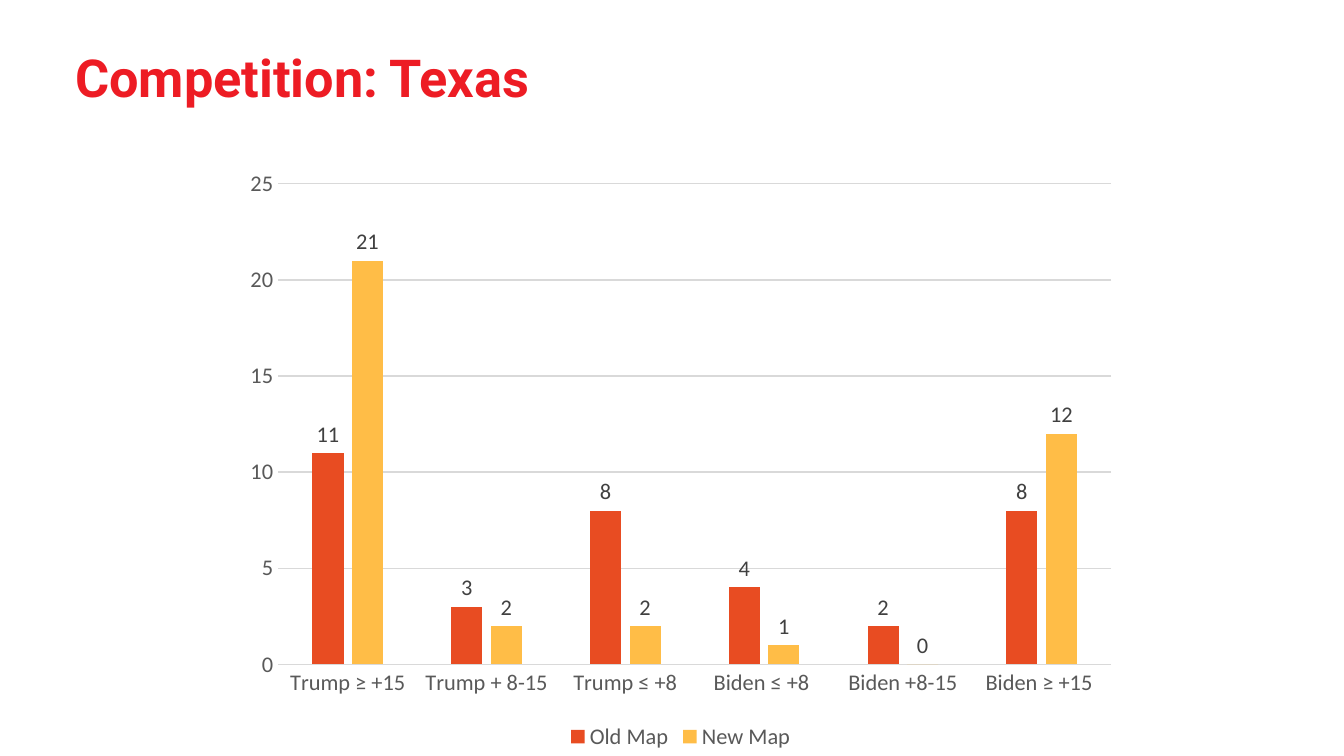
from pptx import Presentation
from pptx.chart.data import CategoryChartData
from pptx.dml.color import RGBColor
from pptx.enum import chart as ch, text
from pptx.util import Inches, Pt

RED = RGBColor(0xED, 0x1C, 0x24)
ORANGE = RGBColor(0xE8, 0x4C, 0x22)
YELLOW = RGBColor(0xFF, 0xBD, 0x47)
DARK_GRAY = RGBColor(0x40, 0x40, 0x40)
GRAY = RGBColor(0x59, 0x59, 0x59)
LIGHT_GRAY = RGBColor(0xD9, 0xD9, 0xD9)

CATEGORIES = ["Trump ≥ +15", "Trump + 8-15", "Trump ≤ +8",
              "Biden ≤ +8 ", "Biden +8-15", "Biden ≥ +15 "]
SERIES = [("Old Map", [11, 3, 8, 4, 2, 8], ORANGE),
          ("New Map", [21, 2, 2, 1, 0, 12], YELLOW)]


def style_font(font, name, size, color, bold=False):
    font.name = name
    font.size = Pt(size)
    font.color.rgb = color
    font.bold = bold


def style_line(line):
    line.color.rgb = LIGHT_GRAY
    line.width = Pt(0.75)


def add_title(s, title):
    sp = s.shapes.add_textbox(Inches(0.56), Inches(0.43), Inches(7.84), Inches(0.46))
    tf = sp.text_frame
    tf.word_wrap = True
    tf.margin_left = tf.margin_right = tf.margin_top = tf.margin_bottom = 0
    tf.vertical_anchor = text.MSO_ANCHOR.TOP
    p = tf.paragraphs[0]
    p.text = title
    p.line_spacing = 0.8
    style_font(p.runs[0].font, "Roboto", 28, RED, bold=True)


def style_axes(chart):
    for axis in (chart.category_axis, chart.value_axis):
        axis.major_tick_mark = axis.minor_tick_mark = ch.XL_TICK_MARK.NONE
        style_font(axis.tick_labels.font, "Calibri", 12, GRAY)
    style_line(chart.category_axis.format.line)
    values = chart.value_axis
    values.format.line.fill.background()
    values.has_major_gridlines = True
    style_line(values.major_gridlines.format.line)


def style_series(series, color):
    series.format.fill.solid()
    series.format.fill.fore_color.rgb = color
    series.invert_if_negative = False
    labels = series.data_labels
    labels.show_value = True
    labels.position = ch.XL_LABEL_POSITION.OUTSIDE_END
    style_font(labels.font, "Calibri", 12, DARK_GRAY)


def add_column_chart(s):
    data = CategoryChartData()
    data.categories = CATEGORIES
    for name, values, _ in SERIES:
        data.add_series(name, values)
    chart = s.shapes.add_chart(ch.XL_CHART_TYPE.COLUMN_CLUSTERED, Inches(1.73), Inches(1.18),
                               Inches(6.67), Inches(4.44), data).chart
    chart.has_title = False
    chart.font.name = "Calibri"
    chart.font.size = Pt(10)
    style_axes(chart)
    plot = chart.plots[0]
    plot.vary_by_categories = False
    plot.gap_width = 219
    plot.overlap = -27
    for series, (_, _, color) in zip(plot.series, SERIES):
        style_series(series, color)
    chart.has_legend = True
    chart.legend.position = ch.XL_LEGEND_POSITION.BOTTOM
    chart.legend.include_in_layout = False
    style_font(chart.legend.font, "Calibri", 12, GRAY)


def main():
    prs = Presentation()
    prs.slide_width = Inches(10)
    prs.slide_height = Inches(10 * 9 / 16)
    s = prs.slides.add_slide(prs.slide_layouts[6])
    add_title(s, "Competition: Texas")
    add_column_chart(s)
    prs.save("out.pptx")


if __name__ == "__main__":
    main()
